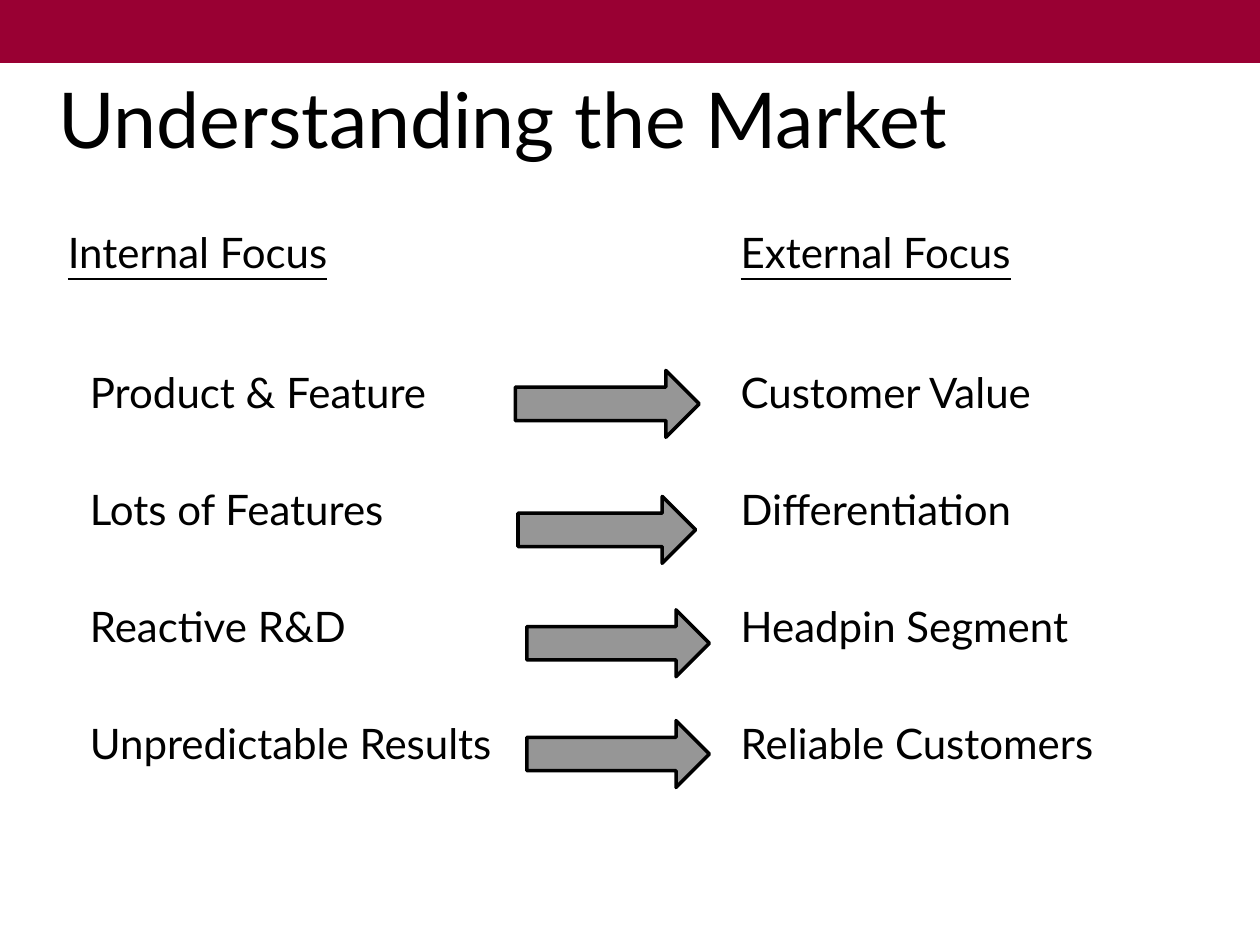
from lxml import etree
from pptx import Presentation
from pptx.dml.color import RGBColor
from pptx.enum.shapes import MSO_SHAPE
from pptx.enum.text import MSO_ANCHOR, MSO_AUTO_SIZE, PP_ALIGN
from pptx.oxml.ns import qn
from pptx.util import Pt

RECTANGLE = MSO_SHAPE.RECTANGLE
RIGHT_ARROW = MSO_SHAPE.RIGHT_ARROW
BOTTOM = MSO_ANCHOR.BOTTOM
TOP = MSO_ANCHOR.TOP
LEFT = PP_ALIGN.LEFT
NO_AUTOFIT = MSO_AUTO_SIZE.NONE

TITLE_ONLY_LAYOUT = 5
HEADINGS = ("Internal Focus", "External Focus")
SHIFTS = [
    ("Product & Feature", "Customer Value"),
    ("Lots of Features", "Differentiation"),
    ("Reactive R&D", "Headpin Segment"),
    ("Unpredictable Results", "Reliable Customers"),
]
ARROWS = [
    (294.5, 211.7, 105.1),
    (296, 283.7, 101.5),
    (301, 348.5, 104.4),
    (301, 411.8, 104.4),
]
ARROW_HEIGHT = 38.2
ITEM_TAB, EXTERNAL_TAB = 12.6, 384.5


def color(value):
    return RGBColor.from_string(value)


def apply(target, values):
    for name, value in values.items():
        setattr(target, name, value)


class SlideBuilder:
    """Hold the style and the current slide."""

    font = {"name": "Lato", "underline": False}
    ink = "000000"

    def __init__(self, presentation):
        layout = presentation.slide_layouts[TITLE_ONLY_LAYOUT]
        self.slide = presentation.slides.add_slide(layout)

    def place(self, shape, left, top, width, height):
        apply(shape, {"left": Pt(left), "top": Pt(top), "width": Pt(width), "height": Pt(height)})

    def style(self, font, size, **values):
        apply(font, {**self.font, "size": Pt(size), **values})
        font.color.rgb = color(self.ink)

    def title(self, text, box, size):
        shape = self.slide.shapes.title
        self.place(shape, *box)
        frame = shape.text_frame
        apply(frame, {"text": text, "vertical_anchor": BOTTOM, "auto_size": NO_AUTOFIT})
        paragraph = frame.paragraphs[0]
        paragraph.alignment = LEFT
        self.style(paragraph.runs[0].font, size)

    def shape(self, kind, box, fill, line_width=0):
        shape = self.slide.shapes.add_shape(kind, *map(Pt, box))
        shape.shadow.inherit = False
        shape.fill.solid()
        shape.fill.fore_color.rgb = color(fill)
        if line_width:
            shape.line.color.rgb = color(self.ink)
            shape.line.width = Pt(line_width)
        else:
            shape.line.fill.background()

    def text_box(self, box, top_margin):
        frame = self.slide.shapes.add_textbox(*map(Pt, box)).text_frame
        apply(frame, {"word_wrap": True, "vertical_anchor": TOP, "margin_top": Pt(top_margin)})
        return frame

    def tabbed_line(self, paragraph, parts, tabs, size, space_before=0, underline=False):
        properties = paragraph._p.get_or_add_pPr()
        tab_list = etree.SubElement(properties, qn("a:tabLst"))
        for position in tabs:
            etree.SubElement(tab_list, qn("a:tab"), pos=str(Pt(position)), algn="l")
        apply(paragraph, {"alignment": LEFT, "space_before": Pt(space_before)})
        for part in parts:
            run = paragraph.add_run()
            run.text = part
            self.style(run.font, size, underline=underline and part != "\t")


def main():
    presentation = Presentation()
    apply(presentation, {"slide_width": Pt(720), "slide_height": Pt(540)})
    builder = SlideBuilder(presentation)
    builder.shape(RECTANGLE, (0, 0, 720, 36), "990033")
    builder.title("Understanding the Market", (26, 48.2, 642, 49), 44)

    frame = builder.text_box((31.7, 118, 612, 362), 11.5)
    internal, external = HEADINGS
    builder.tabbed_line(
        frame.paragraphs[0], (internal, "\t", external), (EXTERNAL_TAB,), 24, underline=True
    )
    for index, (internal, external) in enumerate(SHIFTS):
        builder.tabbed_line(
            frame.add_paragraph(),
            (f"\t{internal}\t{external}",),
            (ITEM_TAB, EXTERNAL_TAB),
            24,
            space_before=38 if index else 51,
        )

    for left, top, width in ARROWS:
        builder.shape(RIGHT_ARROW, (left, top, width, ARROW_HEIGHT), "969696", 2)
    presentation.save("out.pptx")


if __name__ == "__main__":
    main()
